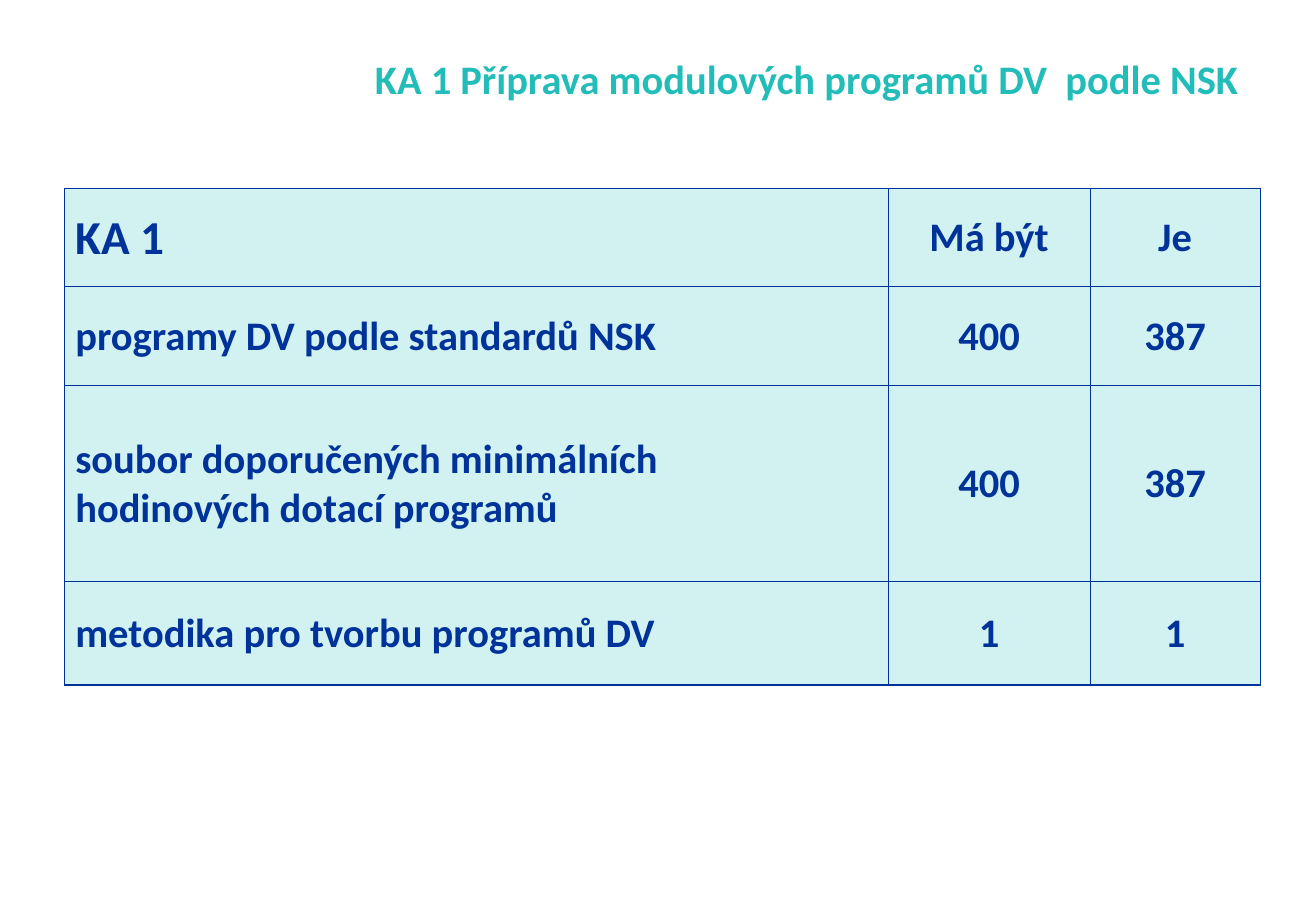
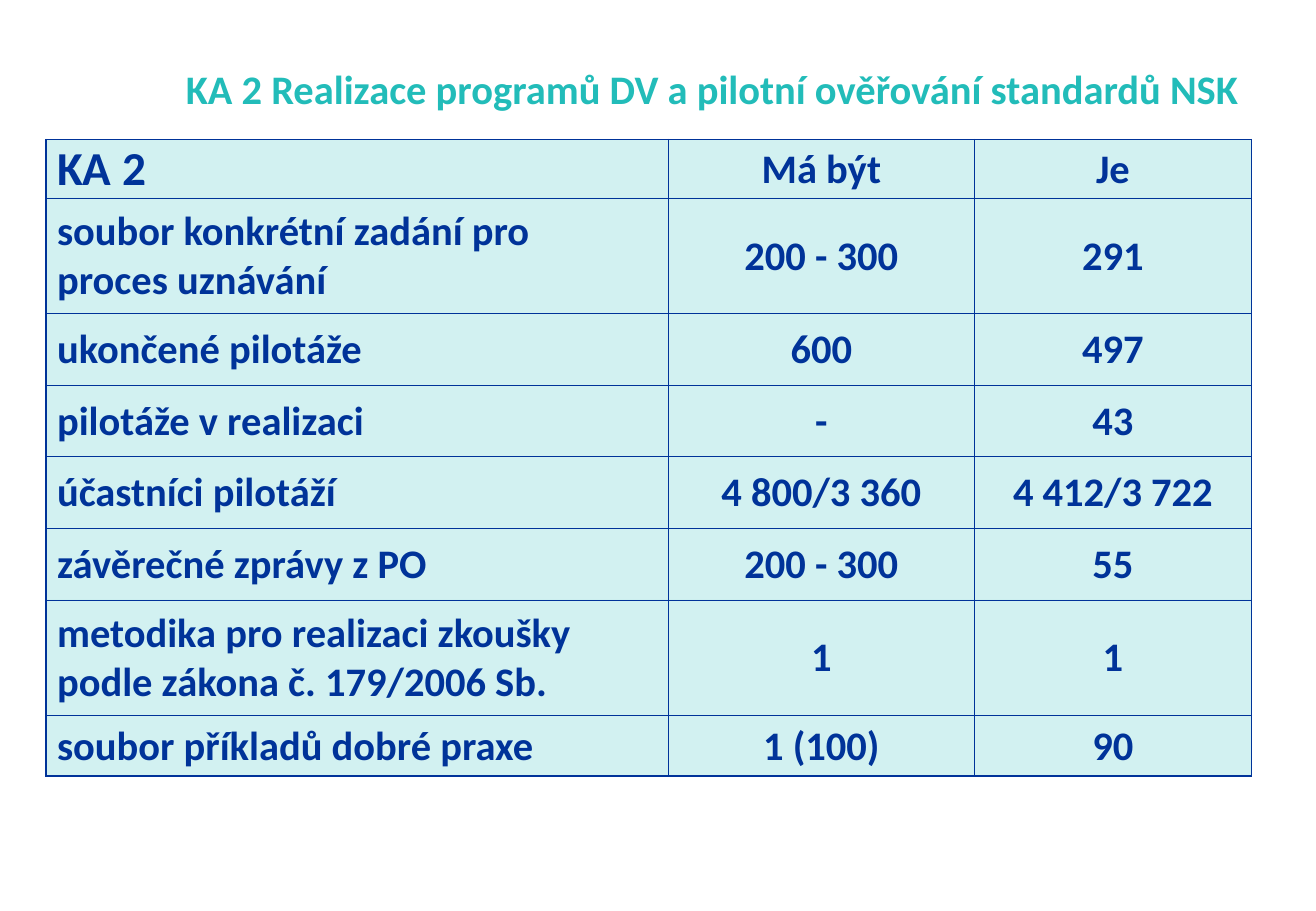
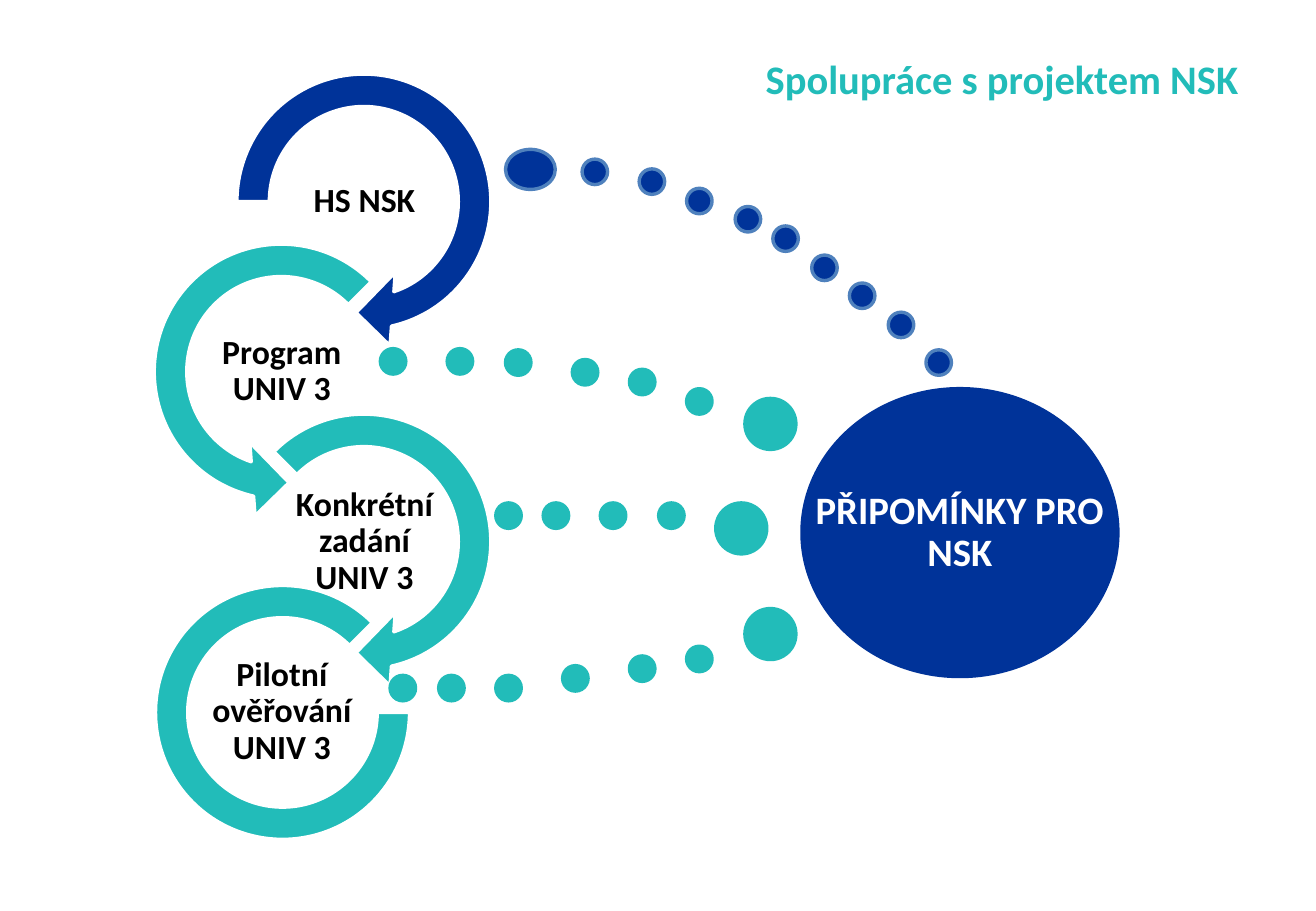
from lxml import etree
from pptx import Presentation
from pptx.dml.color import RGBColor
from pptx.enum.shapes import MSO_SHAPE
from pptx.enum.text import MSO_ANCHOR, PP_ALIGN
from pptx.oxml.ns import qn
from pptx.util import Inches, Pt

LEFT, CENTER, RIGHT = PP_ALIGN.LEFT, PP_ALIGN.CENTER, PP_ALIGN.RIGHT
MIDDLE = MSO_ANCHOR.MIDDLE
ELLIPSE = MSO_SHAPE.OVAL
RIGHT_RING = MSO_SHAPE.CIRCULAR_ARROW
LEFT_RING = MSO_SHAPE.LEFT_CIRCULAR_ARROW
OPEN_RING = MSO_SHAPE.BLOCK_ARC

NAVY = RGBColor(0x00, 0x33, 0x99)
TEAL = RGBColor(0x22, 0xBC, 0xB9)
STEEL = RGBColor(0x4F, 0x81, 0xBD)
WHITE = RGBColor(0xFF, 0xFF, 0xFF)
BLACK = RGBColor(0x00, 0x00, 0x00)

FONT = "Calibri"
TINT_ALPHA = 20000
THIN, THICK = 0.5, 1
SMALL_DOT, LARGE_DOT = 0.21, 0.42
RING_STEP = 1.4


def set_all(target, values):
    for name, value in values.items():
        setattr(target, name, value)


def format_text(frame, text, size, color, align, spacing=None):
    """Fill a text frame; each line of the text is a paragraph."""
    frame.text = text
    frame.word_wrap = True
    for para in frame.paragraphs:
        set_all(para, {"alignment": align, "line_spacing": spacing})
        set_all(para.font, {"name": FONT, "size": Pt(size), "bold": True})
        para.font.color.rgb = color


def add_text(page, text, place, size, color, align, inset, spacing=None):
    box = page.shapes.add_textbox(*map(Inches, place))
    frame = box.text_frame
    format_text(frame, text, size, color, align, spacing)
    sides = ("margin_left", "margin_right", "margin_top", "margin_bottom")
    set_all(frame, dict.fromkeys(sides, Inches(inset)))
    frame.vertical_anchor = MIDDLE


def add_page(deck, title, title_top=0.3):
    page = deck.slides.add_slide(deck.slide_layouts[6])
    add_text(page, title, (0.54, title_top, 9.75, 0.69), 24, TEAL, RIGHT, 0.1)
    return page


def add_figure(page, kind, place, fill, line, adjustments=()):
    shape = page.shapes.add_shape(kind, *map(Inches, place))
    shape.shadow.inherit = False
    shape.fill.solid()
    shape.fill.fore_color.rgb = fill
    shape.line.color.rgb = line
    shape.line.width = Pt(2)
    for index, value in enumerate(adjustments):
        shape.adjustments[index] = value


def add_dots(page, points, size, fill, line):
    for left, top in points:
        add_figure(page, ELLIPSE, (left, top, size, size), fill, line)


# Tables
def style_cell(cell, borders):
    """Tint the cell and draw its borders, given as widths by side."""
    cell.fill.solid()
    cell.fill.fore_color.rgb = TEAL
    properties = cell._tc.get_or_add_tcPr()
    tint = properties.find(qn("a:solidFill")).find(qn("a:srgbClr"))
    etree.SubElement(tint, qn("a:alpha"), val=str(TINT_ALPHA))
    for index, (side, width) in enumerate(borders.items()):
        line = etree.Element(qn("a:ln" + side), w=str(Pt(width)))
        fill = etree.SubElement(line, qn("a:solidFill"))
        etree.SubElement(fill, qn("a:srgbClr"), val=str(NAVY))
        properties.insert(index, line)


def add_results(page, left, top, widths, heights, rows):
    place = (left, top, sum(widths), sum(heights))
    table = page.shapes.add_table(len(rows), len(widths), *map(Inches, place)).table
    set_all(table, {"first_row": False, "horz_banding": False})
    for column, width in zip(table.columns, widths):
        column.width = Inches(width)
    for row, height in zip(table.rows, heights):
        row.height = Inches(height)
    for r, texts in enumerate(rows):
        for c, text in enumerate(texts):
            cell = table.cell(r, c)
            size = 28 if r == c == 0 else 24
            format_text(cell.text_frame, text, size, NAVY, CENTER if c else LEFT)
            set_all(cell, {
                "margin_left": Inches(0.01 if c else 0.09),
                "margin_right": Inches(0.01),
                "margin_top": Inches(0.01),
                "margin_bottom": 0,
                "vertical_anchor": MIDDLE,
            })
            style_cell(cell, {
                "L": THIN if c else THICK,
                "R": THIN,
                "T": THIN if r else THICK,
                "B": THICK if r == len(rows) - 1 else THIN,
            })


def build_programmes(deck):
    page = add_page(deck, "KA 1 Příprava modulových programů DV  podle NSK")
    add_results(page, 0.53, 1.55, (6.78, 1.66, 1.4), (0.81, 0.81, 1.62, 0.85), [
        ("KA 1", "Má být", "Je"),
        ("programy DV podle standardů NSK", "400", "387"),
        ("soubor doporučených minimálních\nhodinových dotací programů", "400", "387"),
        ("metodika pro tvorbu programů DV", "1", "1"),
    ])


def build_pilots(deck):
    page = add_page(deck, "KA 2 Realizace programů DV a pilotní ověřování standardů NSK", 0.38)
    heights = (0.48, 0.95, 0.59, 0.59, 0.59, 0.59, 0.95, 0.5)
    add_results(page, 0.38, 1.15, (5.12, 2.52, 2.28), heights, [
        ("KA 2", "Má být", "Je"),
        ("soubor konkrétní zadání pro\nproces uznávání", "200 - 300", "291"),
        ("ukončené pilotáže", "600", "497"),
        ("pilotáže v realizaci", "-", "43"),
        ("účastníci pilotáží", "4 800/3 360", "4 412/3 722"),
        ("závěrečné zprávy z PO", "200 - 300", "55"),
        ("metodika pro realizaci zkoušky\npodle zákona č. 179/2006 Sb.", "1", "1"),
        ("soubor příkladů dobré praxe", "1 (100)", "90"),
    ])


def build_cooperation(deck):
    page = add_page(deck, "Spolupráce s projektem NSK")

    # Chain of rings: label, kind, colour, left, inset, size, adjustments
    rings = [
        ("HS NSK", RIGHT_RING, NAVY, 1.78, 0, (2.43, 2.44),
         (0.11, 11.42, 45, 108, 0.125)),
        ("Program UNIV 3", LEFT_RING, TEAL, 1.1, 0, (2.43, 2.44),
         (0.11, 11.42, 63, 189, 0.125)),
        ("Konkrétní zadání UNIV 3", RIGHT_RING, TEAL, 1.78, 0, (2.43, 2.44),
         (0.11, 11.42, 45, 135, 0.125)),
        ("Pilotní ověřování UNIV 3", OPEN_RING, TEAL, 1.1, 0.18, (2.09, 2.09),
         (0, 189, 0.127)),
    ]
    for index, (label, kind, color, left, inset, size, adjustments) in enumerate(rings):
        top = 0.44 + index * RING_STEP
        add_figure(page, kind, (left + inset, top + inset, *size), color, WHITE, adjustments)
        add_text(page, label, (left + 0.54, top + 0.88, 1.36, 0.68),
                 20, BLACK, CENTER, 0.01, 0.9)

    # Dotted trail from the first ring
    add_figure(page, ELLIPSE, (4.16, 1.23, 0.41, 0.33), NAVY, STEEL)
    add_dots(page, [
        (4.79, 1.31), (5.26, 1.39), (5.65, 1.55), (6.05, 1.7), (6.36, 1.86),
        (6.68, 2.1), (6.99, 2.33), (7.31, 2.57), (7.62, 2.88),
    ], SMALL_DOT, NAVY, STEEL)

    # Dotted trails from the other rings, each ending in a large dot
    add_dots(page, [
        (3.13, 2.87), (3.68, 2.87), (4.16, 2.88), (4.71, 2.96), (5.18, 3.04), (5.65, 3.2),
        (4.08, 4.14), (4.47, 4.14), (4.94, 4.14), (5.42, 4.14),
        (3.21, 5.56), (3.61, 5.56), (4.08, 5.56), (4.63, 5.48), (5.18, 5.4), (5.65, 5.32),
    ], SMALL_DOT, TEAL, TEAL)
    add_dots(page, [(6.13, 3.28), (5.89, 4.14), (6.13, 5.01)], LARGE_DOT, TEAL, TEAL)

    # Target of the trails
    target = (6.6, 3.2, 2.6, 2.37)
    add_figure(page, ELLIPSE, target, NAVY, NAVY)
    add_text(page, "PŘIPOMÍNKY PRO NSK", target, 23, WHITE, CENTER, 0.03, 0.9)


def main():
    deck = Presentation()
    set_all(deck, {"slide_width": Inches(10.83), "slide_height": Inches(7.5)})
    build_programmes(deck)
    build_pilots(deck)
    build_cooperation(deck)
    deck.save("out.pptx")


if __name__ == "__main__":
    main()
